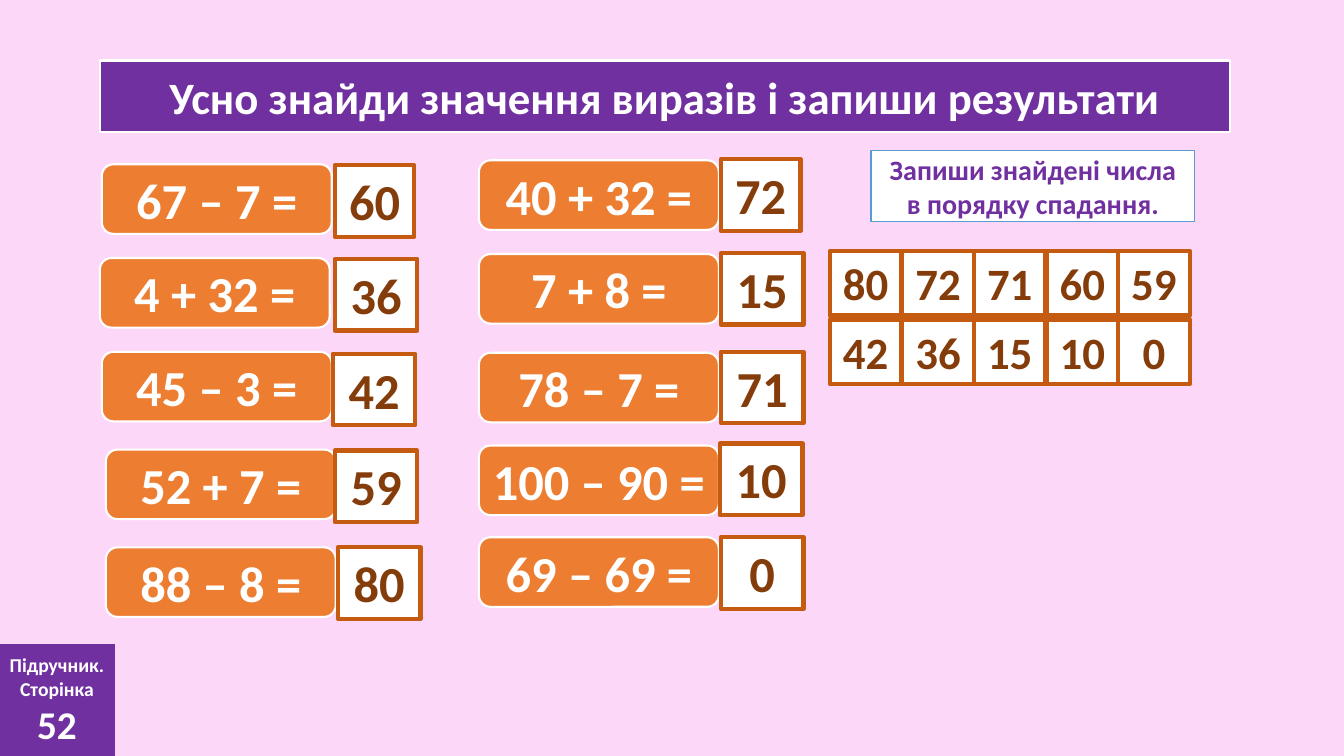
"""Build a slide of mental arithmetic with results sorted in descending order."""
from pptx import Presentation
from pptx.dml.color import RGBColor
from pptx.enum.shapes import MSO_SHAPE as Preset
from pptx.enum.text import MSO_ANCHOR as Anchor, MSO_AUTO_SIZE as AutoSize, PP_ALIGN as Align
from pptx.util import Emu, Pt

EMU_PER_PX = 9144
FONT = "Calibri"
PINK = RGBColor(0xFD, 0xD7, 0xF8)
PURPLE = RGBColor(0x70, 0x30, 0xA0)
ORANGE = RGBColor(0xED, 0x7D, 0x31)
RUST = RGBColor(0xC5, 0x5A, 0x11)
BROWN = RGBColor(0x84, 0x3C, 0x0B)
BLUE = RGBColor(0x5B, 0x9B, 0xD5)
WHITE = RGBColor(0xFF, 0xFF, 0xFF)

# expression, its left, top and width; result, its left, top and width
EXERCISES = [
    ("67 – 7 =", (101, 163, 228), 60, (332, 164, 79)),
    ("4 + 32 =", (99, 256, 228), 36, (332, 257, 82)),
    ("45 – 3 =", (101, 349, 228), 42, (330, 351, 82)),
    ("52 + 7 =", (105, 446, 228), 59, (332, 447, 82)),
    ("88 – 8 =", (105, 543, 228), 80, (335, 543, 82)),
    ("40 + 32 =", (475, 159, 238), 72, (715, 158, 79)),
    ("7 + 8 =", (475, 252, 238), 15, (715, 251, 82)),
    ("78 – 7 =", (475, 350, 238), 71, (715, 349, 82)),
    ("100 – 90 =", (475, 442, 238), 10, (714, 440, 82)),
    ("69 – 69 =", (475, 533, 238), 0, (715, 533, 82)),
]


def px(length):
    """Turn a length in px into EMU."""
    return Emu(length * EMU_PER_PX)


def add_box(slide, box, lines, fill, color, line=None, preset=Preset.RECTANGLE):
    """Add a filled shape with centred bold lines of (text, size)."""
    shape = slide.shapes.add_shape(preset, *map(px, box))
    shape.shadow.inherit = False
    shape.fill.solid()
    shape.fill.fore_color.rgb = fill
    if line:
        shape.line.color.rgb, shape.line.width = line[0], Pt(line[1])
    else:
        shape.line.fill.background()
    frame = shape.text_frame
    frame.word_wrap = True
    frame.vertical_anchor = Anchor.MIDDLE
    for index, (text, size) in enumerate(lines):
        paragraph = frame.add_paragraph() if index else frame.paragraphs[0]
        paragraph.alignment = Align.CENTER
        run = paragraph.add_run()
        run.text = text
        run.font.name, run.font.size, run.font.bold = FONT, Pt(size), True
        run.font.color.rgb = color
    return shape


def add_expression(slide, text, left, top, width):
    """Add a rounded orange box with an expression."""
    add_box(slide, (left, top, width, 69), [(text, 36)], ORANGE, WHITE,
            (WHITE, 1.5), Preset.ROUNDED_RECTANGLE)


def add_number(slide, number, left, top, width, height, size):
    """Add a white box with a number, as tall as its text."""
    shape = add_box(slide, (left, top, width, height), [(str(number), size)],
                    WHITE, BROWN, (RUST, 3))
    shape.text_frame.vertical_anchor = Anchor.TOP
    shape.text_frame.auto_size = AutoSize.SHAPE_TO_FIT_TEXT


def add_sorted_results(slide):
    """Add all results in descending order, five to a row."""
    results = sorted((result for _, _, result, _ in EXERCISES), reverse=True)
    for index, result in enumerate(results):
        row, column = divmod(index, 5)
        left = 823 + (143 * column + 1) // 2
        add_number(slide, result, left, 249 + 68 * row, 71, 64, 32)


def main():
    """Build and save the slide."""
    presentation = Presentation()
    presentation.slide_width, presentation.slide_height = px(1333), px(750)
    slide = presentation.slides.add_slide(presentation.slide_layouts[6])
    slide.background.fill.solid()
    slide.background.fill.fore_color.rgb = PINK

    add_box(slide, (99, 60, 1121, 71),
            [("Усно знайди значення виразів і запиши результати", 32)],
            PURPLE, WHITE, (WHITE, 1.5))
    for expression, place, result, result_place in EXERCISES:
        add_expression(slide, expression, *place)
        add_number(slide, result, *result_place, 71, 36)
    add_box(slide, (864, 149, 321, 71),
            [("Запиши знайдені числа в порядку спадання.", 20)],
            WHITE, PURPLE, (BLUE, 1))
    add_box(slide, (-1, 639, 115, 111),
            [("Підручник.", 14), ("Сторінка", 14), ("52", 28)], PURPLE, WHITE)
    add_sorted_results(slide)
    presentation.save("out.pptx")


if __name__ == "__main__":
    main()
